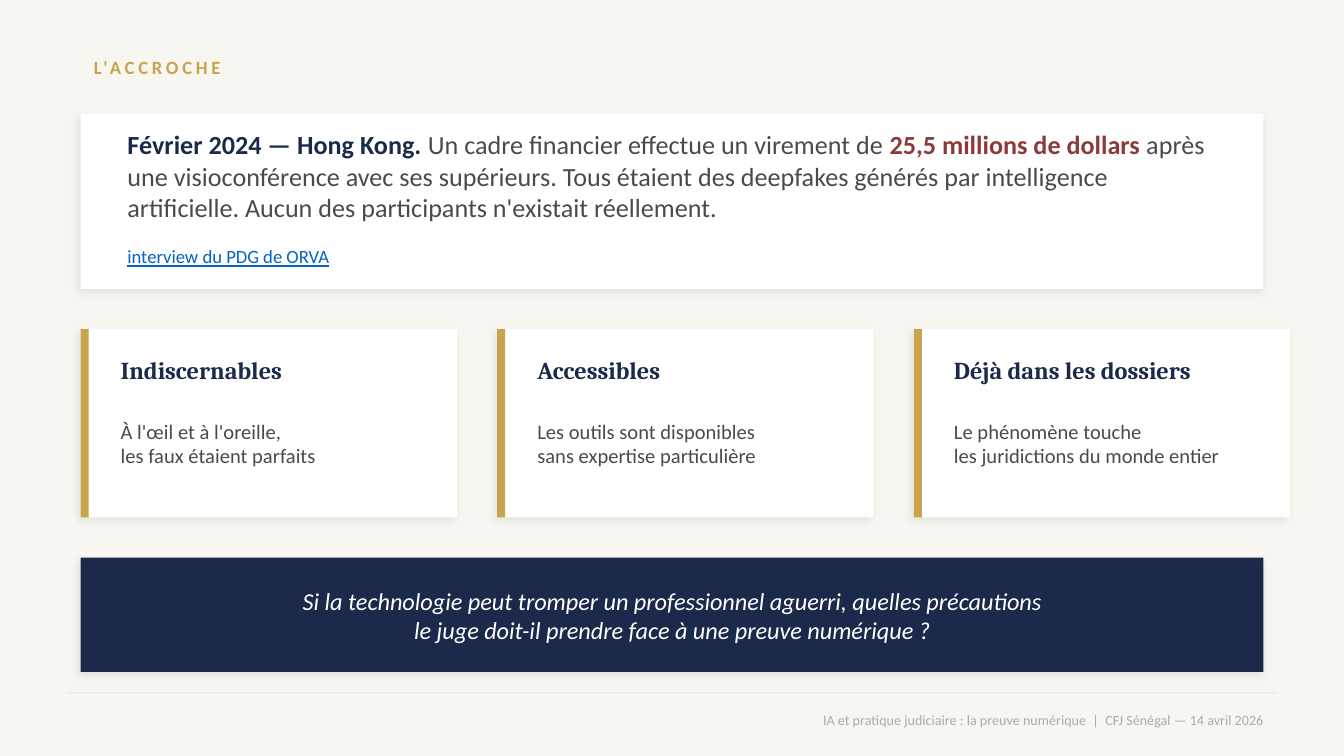
import pptx
import pptx.dml.color
import pptx.enum.shapes
import pptx.enum.text
import pptx.oxml
import pptx.oxml.ns
import pptx.util

CELL = 0.1
MARGIN = 6
FULL_WIDTH = 88
CARD_WIDTH = 28
CARD_STEP = 31
CARD_TOP = 24.5
CARD_HEIGHT = 14

NAVY = "1B2A4A"
GOLD = "C8A44E"
GREY = "4A4A4A"
RED = "8B3A3A"
WHITE = "FFFFFF"
LINK_BLUE = "0563C1"
ALIGN = pptx.enum.text.PP_ALIGN

CARDS = [
    ("Indiscernables", ["À l'œil et à l'oreille,", "les faux étaient parfaits"]),
    ("Accessibles", ["Les outils sont disponibles", "sans expertise particulière"]),
    ("Déjà dans les dossiers", ["Le phénomène touche", "les juridictions du monde entier"]),
]


def color(value):
    return pptx.dml.color.RGBColor.from_string(value)


def cells(*counts):
    return [pptx.util.Inches(round(count * CELL, 3)) for count in counts]


def add_soft_shadow(shape):
    namespace = pptx.oxml.ns.nsdecls("a")
    effects = pptx.oxml.parse_xml(
        f'<a:effectLst {namespace}><a:outerShdw blurRad="50800" dist="25400" '
        'dir="8100000" algn="bl" rotWithShape="0"><a:srgbClr val="000000">'
        '<a:alpha val="8000"/></a:srgbClr></a:outerShdw></a:effectLst>'
    )
    properties = shape._element.spPr
    properties.replace(properties.find(pptx.oxml.ns.qn("a:effectLst")), effects)


def add_panel(slide, area, fill, shadow=False):
    shape = slide.shapes.add_shape(pptx.enum.shapes.MSO_SHAPE.RECTANGLE, *cells(*area))
    shape.fill.solid()
    shape.fill.fore_color.rgb = color(fill)
    shape.line.fill.background()
    shape.shadow.inherit = False
    if shadow:
        add_soft_shadow(shape)


def add_text_frame(slide, area):
    text_frame = slide.shapes.add_textbox(*cells(*area)).text_frame
    text_frame.word_wrap = True
    text_frame.vertical_anchor = pptx.enum.text.MSO_ANCHOR.MIDDLE
    return text_frame


def add_run(paragraph, text, size, fill, name="Calibri", bold=False, italic=False):
    run = paragraph.add_run()
    run.text = text
    run.font.name = name
    run.font.size = pptx.util.Pt(size)
    run.font.color.rgb = color(fill)
    run.font.bold = bold
    run.font.italic = italic
    return run


def add_lines(slide, area, lines, size, fill, align=ALIGN.LEFT, **style):
    text_frame = add_text_frame(slide, area)
    for index, line in enumerate(lines):
        paragraph = text_frame.add_paragraph() if index else text_frame.paragraphs[0]
        paragraph.alignment = align
        run = add_run(paragraph, line, size, fill, **style)
    return run


def add_footer(slide):
    add_panel(slide, (5, 51.5, 90, 0.1), "EFECE5")
    footer = "IA et pratique judiciaire : la preuve numérique  |  CFJ Sénégal — 14 avril 2026"
    add_lines(slide, (5, 51.8, 90, 3.5), [footer], 7.5, "AAAAAA", ALIGN.RIGHT)


def add_heading(slide):
    run = add_lines(slide, (MARGIN, 3, 40, 4), ["L'ACCROCHE"], 10, GOLD, bold=True)
    run.font._element.set("spc", "200")


def add_story(slide):
    add_panel(slide, (MARGIN, 8.5, FULL_WIDTH, 13), WHITE, shadow=True)
    text_frame = add_text_frame(slide, (MARGIN + 2.5, 9.5, FULL_WIDTH - 5, 10.5))
    story = text_frame.paragraphs[0]
    add_run(story, "Février 2024 — Hong Kong. ", 14, NAVY, bold=True)
    add_run(story, "Un cadre financier effectue un virement de ", 14, GREY)
    add_run(story, "25,5 millions de dollars", 14, RED, bold=True)
    add_run(
        story,
        " après une visioconférence avec ses supérieurs. Tous étaient des deepfakes "
        "générés par intelligence artificielle. Aucun des participants n'existait réellement.",
        14,
        GREY,
    )
    source = text_frame.add_paragraph()
    source.space_before = pptx.util.Pt(12)
    add_run(source, "interview du PDG de ORVA", 10, LINK_BLUE).font.underline = True


def add_card(slide, column, title, lines):
    left = MARGIN + column * CARD_STEP
    text_left = left + 2
    add_panel(slide, (left, CARD_TOP, CARD_WIDTH, CARD_HEIGHT), WHITE, shadow=True)
    add_panel(slide, (left, CARD_TOP, 0.6, CARD_HEIGHT), GOLD)
    add_lines(slide, (text_left, CARD_TOP + 1, CARD_WIDTH - 4, 4), [title], 13, NAVY,
              name="Cambria", bold=True)
    add_lines(slide, (text_left, CARD_TOP + 5, CARD_WIDTH - 4, 7), lines, 11, GREY)


def add_question(slide):
    add_panel(slide, (MARGIN, 41.5, FULL_WIDTH, 8.5), NAVY, shadow=True)
    question = [
        "Si la technologie peut tromper un professionnel aguerri, quelles précautions",
        "le juge doit-il prendre face à une preuve numérique ?",
    ]
    add_lines(slide, (MARGIN + 2.5, 42, FULL_WIDTH - 5, 7.5), question, 13, WHITE,
              ALIGN.CENTER, italic=True)


def main():
    presentation = pptx.Presentation()
    presentation.slide_width, presentation.slide_height = cells(100, 56.25)
    slide = presentation.slides.add_slide(presentation.slide_layouts[6])
    slide.background.fill.solid()
    slide.background.fill.fore_color.rgb = color("F8F6F0")
    add_footer(slide)
    add_heading(slide)
    add_story(slide)
    for column, (title, lines) in enumerate(CARDS):
        add_card(slide, column, title, lines)
    add_question(slide)
    presentation.save("out.pptx")


if __name__ == "__main__":
    main()
